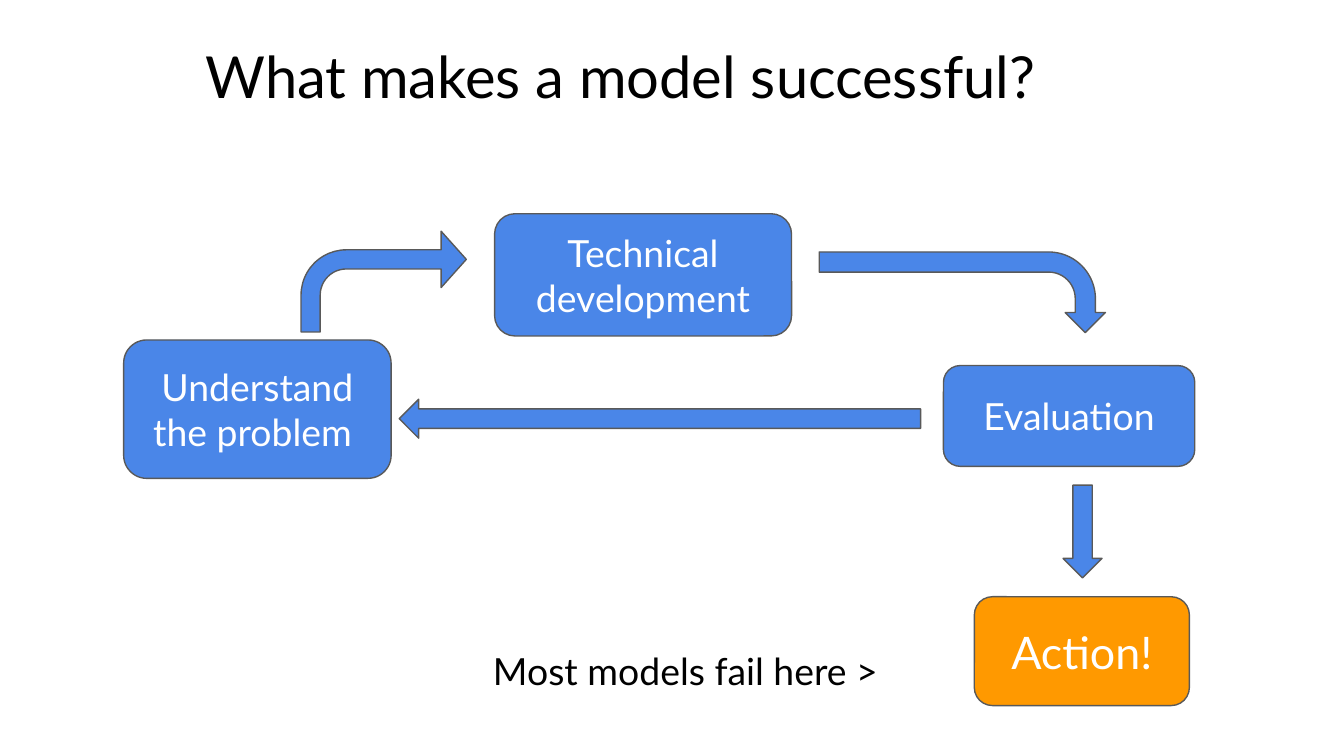
from pptx import Presentation
from pptx.dml.color import RGBColor
from pptx.enum.shapes import MSO_SHAPE as SHAPE
from pptx.enum.text import MSO_ANCHOR as ANCHOR, PP_ALIGN as ALIGN
from pptx.util import Inches, Pt

FONT = "Lato"
BLUE = RGBColor(0x4A, 0x86, 0xE8)
ORANGE = RGBColor(0xFF, 0x99, 0x00)
GRAY = RGBColor(0x59, 0x59, 0x59)
WHITE = RGBColor(0xFF, 0xFF, 0xFF)
BLACK = RGBColor(0x00, 0x00, 0x00)
TITLE_ONLY = 5


def set_text(sp, text, size, color, align=ALIGN.LEFT, anchor=ANCHOR.MIDDLE):
    tf = sp.text_frame
    tf.word_wrap = True
    tf.vertical_anchor = anchor
    tf.margin_left = tf.margin_right = Inches(0.1)
    tf.margin_top = tf.margin_bottom = Inches(0.1)
    p = tf.paragraphs[0]
    p.text = text
    p.alignment = align
    p.font.name = FONT
    p.font.size = Pt(size)
    p.font.color.rgb = color


def add_title(s, text, box):
    title = s.shapes.title
    title.left, title.top, title.width, title.height = map(Inches, box)
    set_text(title, text, 31, BLACK)


def add_filled(s, kind, box, fill=BLUE, adjustments=()):
    sp = s.shapes.add_shape(kind, *map(Inches, box))
    for i, value in enumerate(adjustments):
        sp.adjustments[i] = value
    sp.shadow.inherit = False
    sp.fill.solid()
    sp.fill.fore_color.rgb = fill
    sp.line.color.rgb = GRAY
    sp.line.width = Pt(0.75)
    return sp


def add_step(s, text, box, fill=BLUE, size=20):
    sp = add_filled(s, SHAPE.ROUNDED_RECTANGLE, box, fill)
    set_text(sp, text, size, WHITE, ALIGN.CENTER)


def add_arrow(s, kind, box, adjustments=(), rotation=0):
    sp = add_filled(s, kind, box, adjustments=adjustments)
    sp.rotation = rotation


def add_label(s, text, box):
    sp = s.shapes.add_textbox(*map(Inches, box))
    set_text(sp, text, 20, BLACK, anchor=ANCHOR.TOP)


def main():
    prs = Presentation()
    prs.slide_width = Inches(10)
    prs.slide_height = prs.slide_width * 9 // 16
    s = prs.slides.add_slide(prs.slide_layouts[TITLE_ONLY])

    add_title(s, "What makes a model successful?", (1.43, 0, 8.71, 1.12))

    add_step(s, "Understand the problem ", (0.92, 2.53, 1.99, 1.03))
    add_step(s, "Technical development", (3.68, 1.59, 2.21, 0.91))
    add_step(s, "Evaluation", (7.02, 2.72, 1.87, 0.75))

    add_arrow(s, SHAPE.BENT_ARROW, (6.86, 1.11, 0.6, 2.13),
              (0.25, 0.25, 0.25, 0.58), rotation=90)
    add_arrow(s, SHAPE.BENT_ARROW, (2.24, 1.72, 1.23, 0.75),
              (0.19, 0.28, 0.25, 0.45))
    add_arrow(s, SHAPE.LEFT_ARROW, (2.97, 2.97, 3.88, 0.29))

    add_step(s, "Action!", (7.25, 4.44, 1.6, 0.81), ORANGE, 24)
    add_arrow(s, SHAPE.DOWN_ARROW, (7.91, 3.61, 0.29, 0.69))
    add_label(s, "Most models fail here >", (3.57, 4.72, 6.17, 0.91))

    prs.save("out.pptx")


if __name__ == "__main__":
    main()
